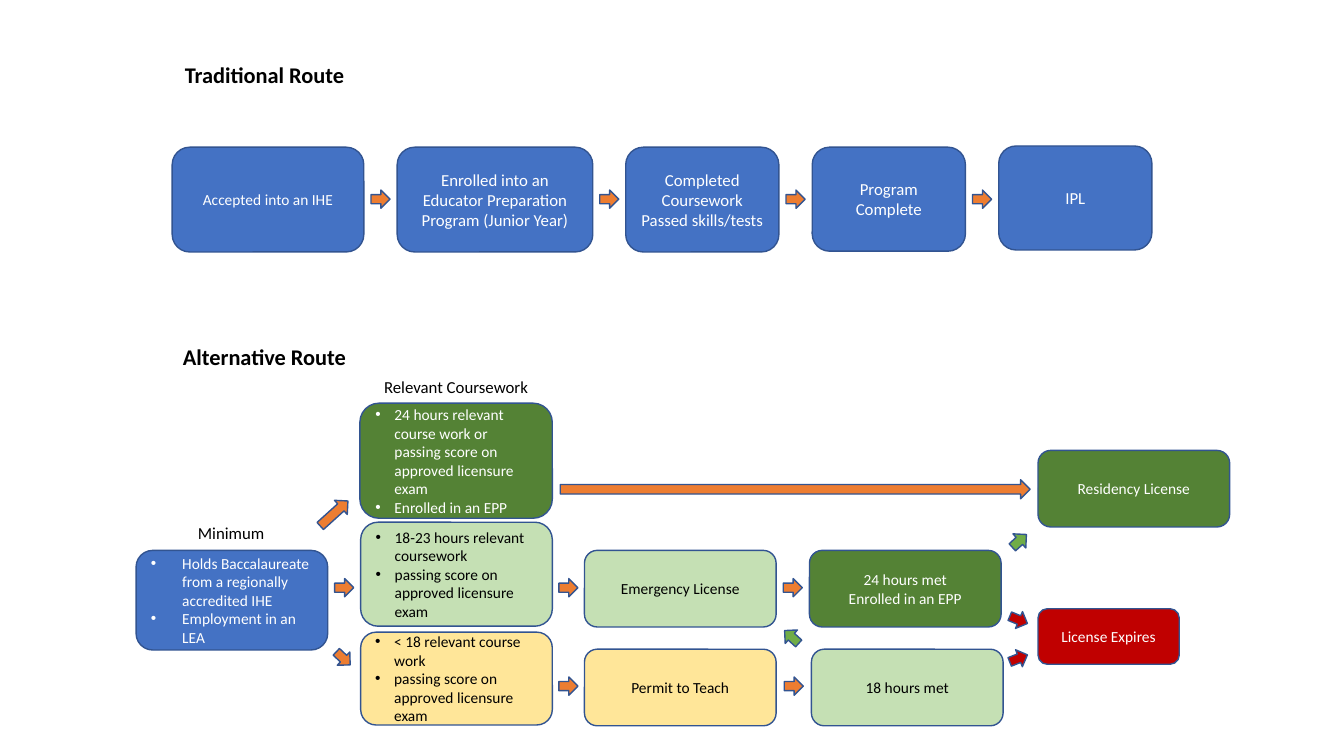
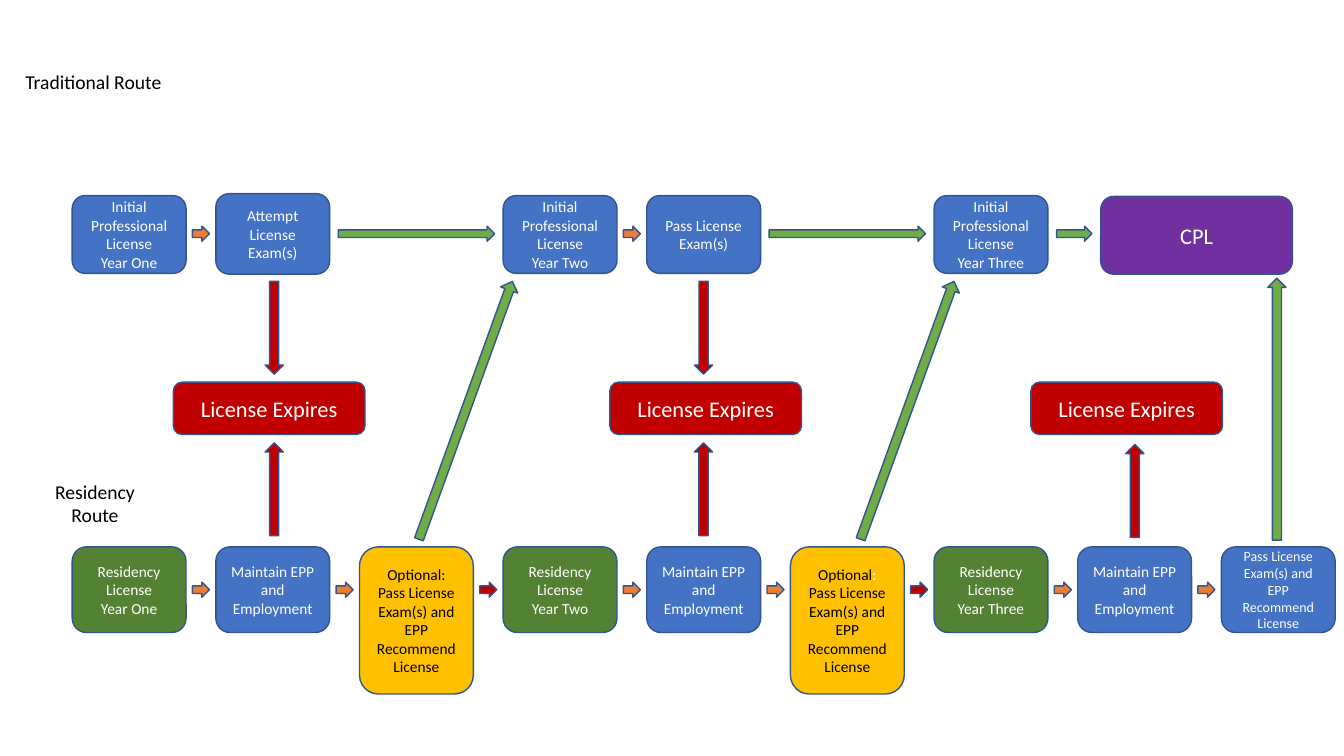
"""Build two flow charts of the routes to a teaching license."""
from lxml import etree
from pptx import Presentation
from pptx import util as u
from pptx.dml.color import RGBColor
from pptx.enum import shapes, text
from pptx.oxml.ns import qn

FONT = "Calibri"
OUTLINE = "325491"
BLACK, WHITE = "000000", "FFFFFF"
ORANGE, GREEN, RED = "ED7D31", "70AD47", "C00000"
STYLES = {
    "blue": ("4472C4", WHITE),
    "forest": ("548235", WHITE),
    "mint": ("C5E0B4", BLACK),
    "cream": ("FFE699", BLACK),
    "amber": ("FFC000", BLACK),
    "red": (RED, WHITE),
    "purple": ("7030A0", WHITE),
}
LICENSE_W, LICENSE_H = 4.83, 1.93
STEP_W = 2.87


def column(number):
    """Return the left edge of a numbered column of yearly steps."""
    return 1.82 + 3.62 * number


def initial(number, year):
    """Describe an initial license of one year."""
    return ("blue", column(number), 4.93, STEP_W, 1.96, 11,
            ["Initial Professional License", f"Year {year}"])


def residency(number, year):
    """Describe a residency license of one year."""
    return ("forest", column(number), 13.78, STEP_W, 2.16, 11,
            ["Residency License", f"Year {year}"])


def maintain(number):
    """Describe the step that keeps a residency license valid."""
    return ("blue", column(number), 13.78, STEP_W, 2.16, 11,
            ["Maintain EPP", "and Employment"])


def optional(number, colon_color):
    """Describe the optional early exam step."""
    opening = [("Optional", BLACK), (": ", colon_color), ("Pass License Exam(s) and", BLACK)]
    return ("amber", column(number), 13.78, STEP_W, 3.71, 11,
            [opening, "EPP", "Recommend License"])


ENTRY = {
    "title": ("Traditional Route", 4.34, 1.5, 4.65, 0.89, 16, True, False),
    "labels": [
        ("Alternative Route", 4.34, 8.59, 4.65, 0.89, 16, True, False),
        ("Relevant Coursework", 9.4, 9.37, 4.19, 0.76, 12, False, False),
        ("Minimum", 4.72, 13.06, 2.21, 0.76, 12, False, False),
    ],
    "chains": [
        (5.02, 0.46, [(ORANGE, 0.48)] * 4, [
            ("blue", 4.34, 3.71, LICENSE_W, 2.64, 11, ["Accepted into an IHE"]),
            ("blue", 10.01, 3.71, 4.93, 2.64, 12,
             ["Enrolled into an Educator Preparation Program (Junior Year)"]),
            ("blue", 15.77, 3.71, 3.86, 2.64, 12,
             ["Completed Coursework", "Passed skills/tests"]),
            ("blue", 20.47, 3.71, 3.86, 2.62, 12, ["Program Complete"]),
            ("blue", 25.17, 3.68, 3.86, 2.62, 12, ["IPL"]),
        ]),
        (12.33, 0.48, [(ORANGE, 11.84)], [
            ("forest", 9.07, 10.16, 4.85, 2.9, 11,
             ["24 hours relevant course work or passing score on approved licensure exam",
              "Enrolled in an EPP"], 0.48),
            ("forest", 26.16, 11.35, LICENSE_W, LICENSE_H, 11, ["Residency License"]),
        ]),
        (14.81, 0.46, [(ORANGE, 0.48)] * 3, [
            ("blue", 3.43, 13.87, LICENSE_W, 2.51, 11,
             ["Holds Baccalaureate from a regionally accredited IHE",
              "Employment in an LEA"], 0.79),
            ("mint", 9.09, 13.16, LICENSE_W, 2.62, 11,
             ["18-23 hours relevant coursework",
              "passing score on approved licensure exam"], 0.48),
            ("mint", 14.73, 13.87, LICENSE_W, LICENSE_H, 11, ["Emergency License"]),
            ("forest", 20.4, 13.87, LICENSE_W, LICENSE_H, 11,
             ["24 hours met", "Enrolled in an EPP"]),
        ]),
        (17.29, 0.46, [(ORANGE, 0.48)] * 2, [
            ("cream", 9.09, 15.93, LICENSE_W, 2.34, 11,
             ["< 18 relevant course work",
              "passing score on approved licensure exam"], 0.48),
            ("cream", 14.73, 16.36, LICENSE_W, LICENSE_H, 11, ["Permit to Teach"]),
            ("mint", 20.45, 16.36, LICENSE_W, LICENSE_H, 11, ["18 hours met"]),
        ]),
        (0, 0, [], [("red", 26.16, 15.34, 3.56, 1.4, 11, ["License Expires"])]),
    ],
    "turns": [
        (ORANGE, 7.95, 12.7, 0.94, 0.48, 317.9),
        (ORANGE, 8.41, 16.36, 0.48, 0.46, 43.3),
        (GREEN, 19.71, 15.82, 0.48, 0.46, 222.3),
        (GREEN, 25.45, 13.39, 0.48, 0.48, 317.7),
        (RED, 25.43, 15.39, 0.48, 0.46, 22.6),
        (RED, 25.43, 16.36, 0.48, 0.46, 338.2),
    ],
}
YEARS = {
    "title": ("Traditional Route", 0.36, 1.63, 3.99, 0.86, 14, False, False),
    "labels": [("Residency Route", 0.53, 11.96, 3.73, 0.81, 14, False, True)],
    "chains": [
        (5.89, 0.38,
         [(ORANGE, 0.43), (GREEN, 3.94), (ORANGE, 0.43), (GREEN, 3.94), (GREEN, 0.89)], [
             initial(0, "One"),
             ("blue", column(1), 4.88, STEP_W, 2.03, 11, ["Attempt License Exam(s)"]),
             initial(3, "Two"),
             ("blue", column(4), 4.93, STEP_W, 1.96, 11, ["Pass License Exam(s)"]),
             initial(6, "Three"),
             ("purple", 27.74, 4.95, LICENSE_W, 1.96, 16, ["CPL"]),
         ]),
        (14.86, 0.38,
         [(ORANGE, 0.43), (ORANGE, 0.43), (RED, 0.43)] * 2 + [(ORANGE, 0.43)] * 2, [
             residency(0, "One"), maintain(1), optional(2, BLACK),
             residency(3, "Two"), maintain(4), optional(5, WHITE),
             residency(6, "Three"), maintain(7),
             ("blue", column(8), 13.78, STEP_W, 2.16, 10,
              ["Pass License Exam(s) and", "EPP", "Recommend License"]),
         ]),
        (0, 0, [], [("red", left, 9.63, LICENSE_W, 1.32, 16, ["License Expires"])
                    for left in (4.37, 15.37, 25.98)]),
    ],
    "turns": [
        *[(RED, left, top, 2.34, 0.46, turn)
          for left in (5.74, 16.56) for top, turn in ((8.03, 90), (12.1, 270))],
        (RED, 27.43, 12.14, 2.34, 0.46, 270),
        (GREEN, 8.28, 10.11, 6.91, 0.46, 289.9),
        (GREEN, 19.41, 10.11, 6.91, 0.46, 289.9),
        (GREEN, 28.88, 10.08, 6.6, 0.46, 270),
    ],
}


def rgb(color):
    """Turn a hex string into a colour."""
    return RGBColor.from_string(color)


def place(left, top, width, height):
    """Turn four centimetre values into lengths."""
    return [u.Cm(value) for value in (left, top, width, height)]


def add_bullet(para, indent):
    """Give a paragraph a hanging round bullet."""
    props = para._p.get_or_add_pPr()
    props.set("marL", str(u.Cm(indent)))
    props.set("indent", str(-u.Cm(indent)))
    etree.SubElement(props, qn("a:buFont")).set("typeface", "Arial")
    etree.SubElement(props, qn("a:buChar")).set("char", "•")


def format_font(font, size, color, bold=False):
    """Set the face, size, colour and weight of a font."""
    font.name, font.size, font.bold = FONT, u.Pt(size), bold
    font.color.rgb = rgb(color)


def add_figure(page, kind, fill, area):
    """Draw an outlined preset shape."""
    figure = page.shapes.add_shape(kind, *place(*area))
    figure.shadow.inherit = False
    figure.fill.solid()
    figure.fill.fore_color.rgb = rgb(fill)
    figure.line.color.rgb = rgb(OUTLINE)
    figure.line.width = u.Pt(1)
    return figure


def add_arrow(page, color, left, top, width, height, turn=0):
    """Draw a block arrow, turned if needed."""
    arrow = add_figure(page, shapes.MSO_SHAPE.RIGHT_ARROW, color, (left, top, width, height))
    arrow.rotation = turn


def add_box(page, style, left, top, width, height, size, lines, indent=0):
    """Draw a rounded box holding centred or bulleted lines."""
    fill, color = STYLES[style]
    box = add_figure(page, shapes.MSO_SHAPE.ROUNDED_RECTANGLE, fill, (left, top, width, height))
    frame = box.text_frame
    frame.word_wrap = True
    frame.vertical_anchor = text.MSO_ANCHOR.MIDDLE
    for number, line in enumerate(lines):
        para = frame.add_paragraph() if number else frame.paragraphs[0]
        para.alignment = text.PP_ALIGN.LEFT if indent else text.PP_ALIGN.CENTER
        if indent:
            add_bullet(para, indent)
        for words, shade in [(line, color)] if isinstance(line, str) else line:
            span = para.add_run()
            span.text = words
            format_font(span.font, size, shade)


def add_chain(page, middle, height, links, boxes):
    """Draw a row of boxes with an arrow centred in each gap."""
    for box in boxes:
        add_box(page, *box)
    for (color, width), before, after in zip(links, boxes, boxes[1:]):
        centre = (before[1] + before[3] + after[1]) / 2
        add_arrow(page, color, centre - width / 2, middle - height / 2, width, height)


def fill_label(label, words, left, top, width, height, size, bold, wrap):
    """Place and format a heading or label."""
    label.left, label.top, label.width, label.height = place(left, top, width, height)
    frame = label.text_frame
    frame.text = words
    frame.word_wrap = wrap
    frame.auto_size = text.MSO_AUTO_SIZE.NONE
    frame.vertical_anchor = text.MSO_ANCHOR.TOP
    para = frame.paragraphs[0]
    para.alignment = text.PP_ALIGN.CENTER
    para.line_spacing = 0.9 if bold else 1.0
    format_font(para.runs[0].font, size, BLACK, bold)


def add_page(deck, content):
    """Add one flow chart slide."""
    page = deck.slides.add_slide(deck.slide_layouts[5])
    fill_label(page.shapes.title, *content["title"])
    for label in content["labels"]:
        fill_label(page.shapes.add_textbox(0, 0, 0, 0), *label)
    for chain in content["chains"]:
        add_chain(page, *chain)
    for arrow in content["turns"]:
        add_arrow(page, *arrow)


def main():
    """Build and save the deck."""
    deck = Presentation()
    deck.slide_width, deck.slide_height = u.Cm(33.87), u.Cm(19.05)
    for content in (ENTRY, YEARS):
        add_page(deck, content)
    deck.save("out.pptx")


if __name__ == "__main__":
    main()
